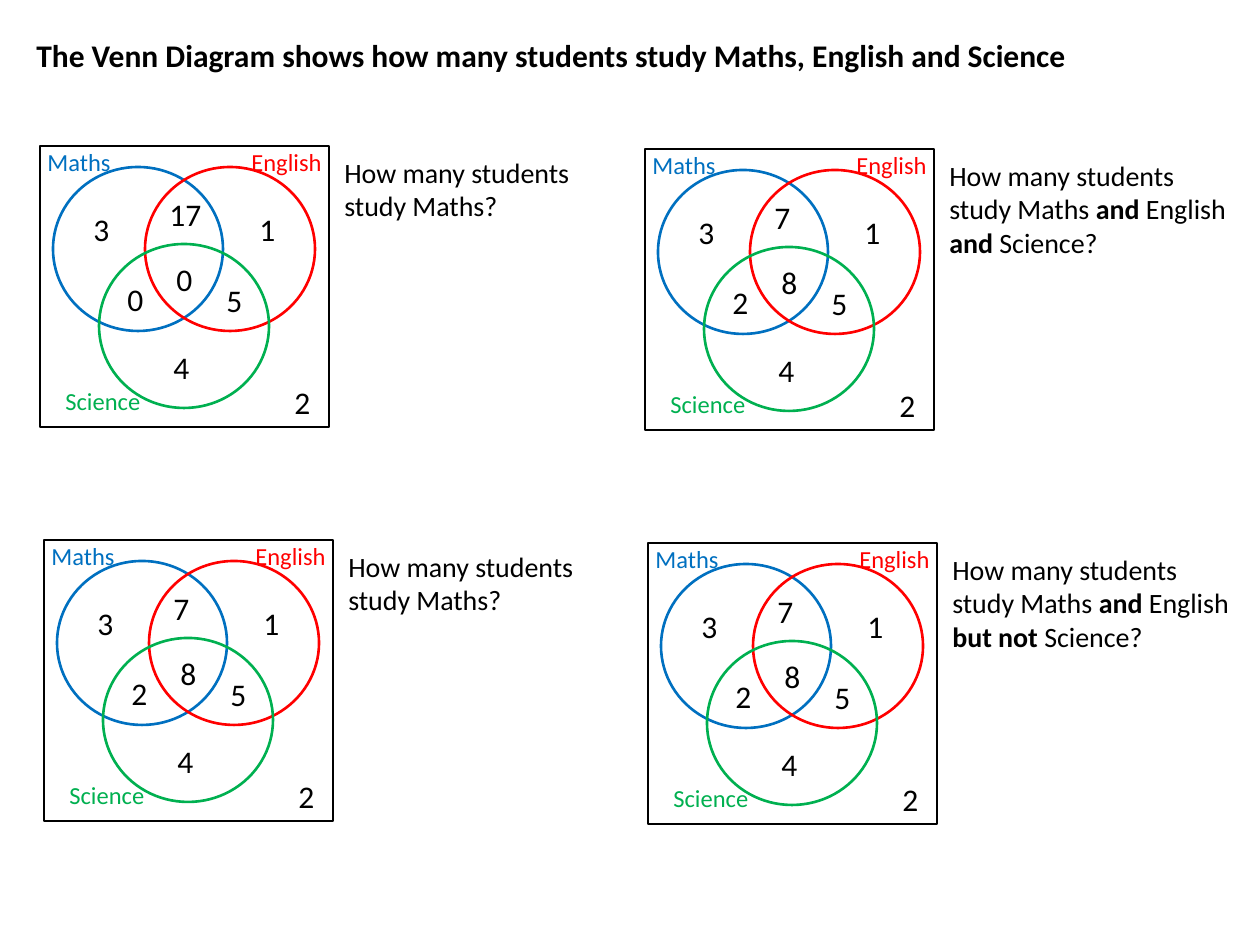
"""Build a slide of four Venn diagrams, each with a question about students' subjects."""
from pptx import Presentation
from pptx.dml.color import RGBColor
from pptx.enum.shapes import MSO_SHAPE as Shape
from pptx.enum.text import MSO_AUTO_SIZE as AutoSize
from pptx.util import Pt

PX = 914400 / 126
FONT = "Calibri"
COLORS = {"ink": "000000", "Maths": "0070C0", "English": "FF0000", "Science": "00B050"}

FRAME_SIZE = (289, 281)
CIRCLE_SIZE = (170, 164)
CIRCLES = {"Maths": (13, 21), "English": (105, 21), "Science": (59, 98)}
SUBJECT_LABELS = {
    "Maths": (-5, -5, 141, 43),
    "English": (199, -5, 101, 43),
    "Science": (13, 234, 141, 43),
}
REGIONS = {
    "maths_english": (117, 43, 60, 51),
    "maths": (41, 58, 45, 51),
    "english": (207, 58, 45, 51),
    "none": (242, 231, 45, 51),
    "maths_science": (75, 128, 45, 51),
    "all": (124, 108, 45, 51),
    "english_science": (174, 129, 45, 51),
    "science": (121, 196, 45, 51),
}
COUNTS = {
    "maths_english": 7, "maths": 3, "english": 1, "none": 2,
    "maths_science": 2, "all": 8, "english_science": 5, "science": 4,
}
NO_OVERLAP_COUNTS = COUNTS | {"maths_english": 17, "maths_science": 0, "all": 0}

MATHS_QUESTION = [("How many students study Maths?", False)]


def two_subject_question(joiner):
    """Return the runs of a Maths and English question, with the joining words in bold."""
    return [
        ("How many students study Maths ", False), ("and", True),
        (" English ", False), (joiner, True), (" Science?", False),
    ]


PANELS = [
    ((40, 146), NO_OVERLAP_COUNTS, MATHS_QUESTION, 80),
    ((44, 540), COUNTS, MATHS_QUESTION, 80),
    ((645, 149), COUNTS, two_subject_question("and"), 115),
    ((648, 543), COUNTS, two_subject_question("but not"), 115),
]


def px(*lengths):
    """Turn pixel lengths into EMU."""
    return [round(length * PX) for length in lengths]


def shifted(origin, box):
    """Place a box given relative to a panel's origin."""
    return (origin[0] + box[0], origin[1] + box[1], *box[2:])


def add_outline(slide, kind, box, color):
    """Draw an unfilled shape with a thin line."""
    outline = slide.shapes.add_shape(kind, *px(*box))
    outline.shadow.inherit = False
    outline.fill.background()
    outline.line.color.rgb = RGBColor.from_string(COLORS[color])
    outline.line.width = Pt(1.5)


def add_text(slide, box, runs, size, color="ink"):
    """Write one paragraph made of (wording, bold) runs."""
    frame = slide.shapes.add_textbox(*px(*box)).text_frame
    frame.word_wrap = True
    frame.auto_size = AutoSize.SHAPE_TO_FIT_TEXT
    for wording, bold in runs:
        run = frame.paragraphs[0].add_run()
        run.text = wording
        run.font.name = FONT
        run.font.size = Pt(size)
        run.font.bold = bold
        run.font.color.rgb = RGBColor.from_string(COLORS[color])


def add_venn(slide, origin, counts):
    """Draw a framed three-circle Venn diagram with its labels and counts."""
    add_outline(slide, Shape.RECTANGLE, (*origin, *FRAME_SIZE), "ink")
    for subject, corner in CIRCLES.items():
        add_outline(slide, Shape.OVAL, shifted(origin, corner + CIRCLE_SIZE), subject)
    for subject, box in SUBJECT_LABELS.items():
        add_text(slide, shifted(origin, box), [(subject, False)], 14, subject)
    for region, box in REGIONS.items():
        add_text(slide, shifted(origin, box), [(str(counts[region]), False)], 18)


def main():
    """Build and save the slide."""
    deck = Presentation()
    deck.slide_width, deck.slide_height = px(1260, 945)
    slide = deck.slides.add_slide(deck.slide_layouts[6])
    title = "The Venn Diagram shows how many students study Maths, English and Science"
    add_text(slide, (24, 30, 1236, 51), [(title, True)], 18)
    for origin, counts, question, height in PANELS:
        add_venn(slide, origin, counts)
        add_text(slide, shifted(origin, (292, 3, 305, height)), question, 16)
    deck.save("out.pptx")


if __name__ == "__main__":
    main()
